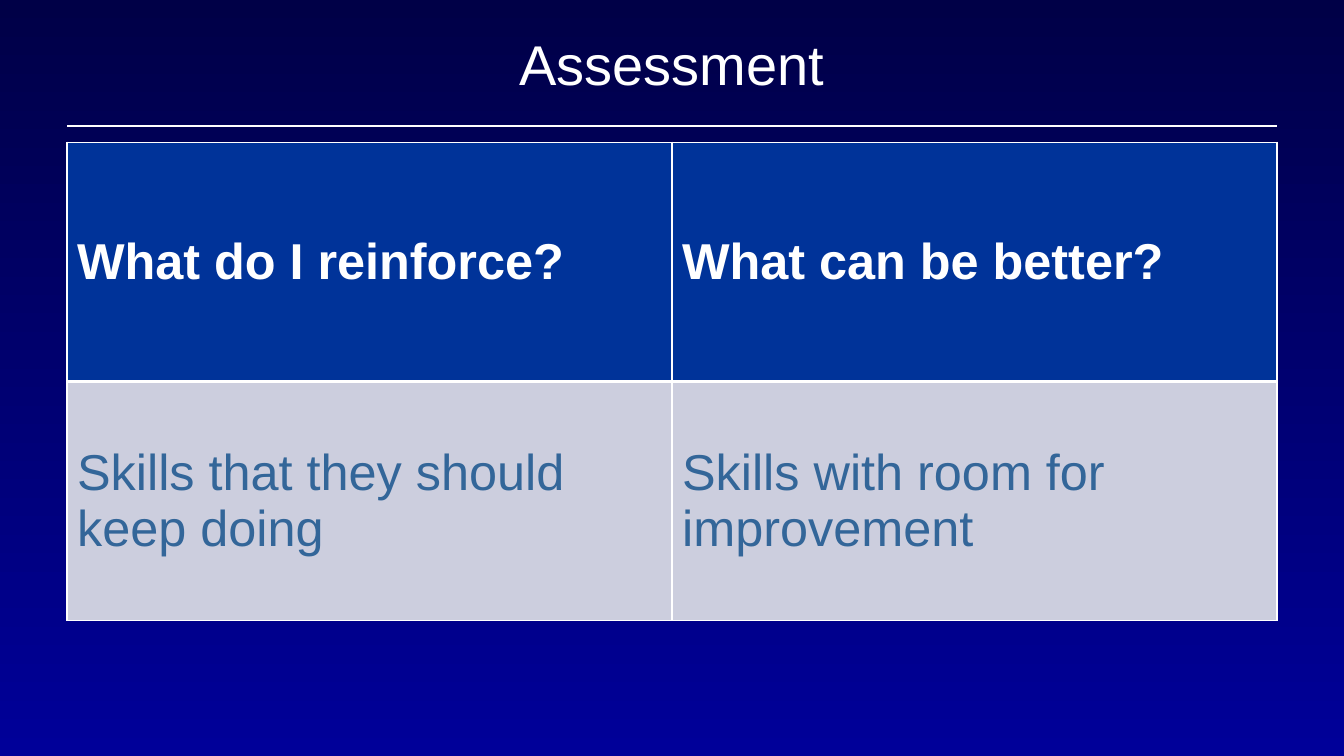
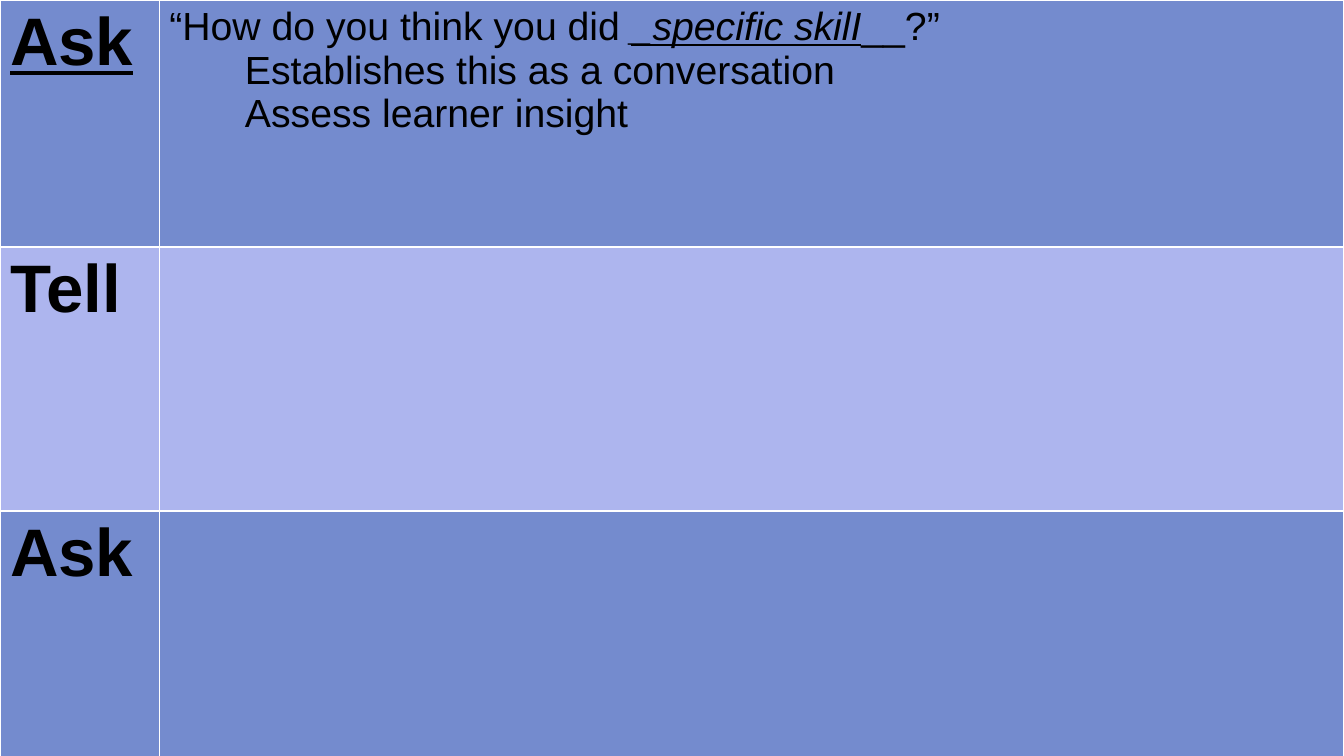
from lxml.etree import SubElement
from pptx import Presentation
from pptx.dml.color import RGBColor
from pptx.enum.shapes import MSO_CONNECTOR
from pptx.enum.text import MSO_ANCHOR, PP_ALIGN
from pptx.oxml.ns import qn
from pptx.util import Inches, Pt

WHITE, BLACK = "FFFFFF", "000000"
HEADER_BLUE, BODY_GRAY, BODY_TEXT = "003399", "CCCEDE", "336699"
ROW_BLUE, ROW_LILAC = "748BCE", "ADB5EE"


def write(paragraph, text, size=28, color=BLACK, bold=False, italic=False, underline=False):
    run = paragraph.add_run()
    run.text = text
    font = run.font
    font.name, font.size = "Arial", Pt(size)
    font.bold, font.italic, font.underline = bold, italic, underline
    font.color.rgb = RGBColor.from_string(color)


def style_cell(cell, fill, top=1, bottom=1):
    """Give the cell a plain fill and white borders, widths in points."""
    properties = cell._tc.get_or_add_tcPr()
    for side, width in (("L", 1), ("R", 1), ("T", top), ("B", bottom)):
        border = SubElement(properties, qn(f"a:ln{side}"), w=str(Pt(width)))
        border_fill = SubElement(border, qn("a:solidFill"))
        SubElement(border_fill, qn("a:srgbClr"), val=WHITE)
    cell.fill.solid()
    cell.fill.fore_color.rgb = RGBColor.from_string(fill)


prs = Presentation()
prs.slide_width, prs.slide_height = Inches(13.33), Inches(7.5)
blank = prs.slide_layouts[6]
content_width, title_height = Inches(12), Inches(1.25)
margin = (prs.slide_width - content_width) // 2

# Shared background
master = prs.slide_master
background = master.background.fill
background.gradient()
background.gradient_angle = 270
for stop, color in zip(background.gradient_stops, ("000047", "000099")):
    stop.color.rgb = RGBColor.from_string(color)

# Slide 1: assessment
slide = prs.slides.add_slide(blank)

# The rule under the title belongs to the master, which has no add_connector
title_rule = slide.shapes.add_connector(
    MSO_CONNECTOR.STRAIGHT, margin, title_height, margin + content_width, title_height)
title_rule.line.color.rgb = RGBColor.from_string(WHITE)
title_rule.line.width = Pt(2)
SubElement(title_rule._element.spPr, qn("a:effectLst"))
master.shapes._spTree.append(title_rule._element)

title = slide.shapes.add_textbox(margin, 0, content_width, title_height).text_frame
title.word_wrap = True
title.vertical_anchor = MSO_ANCHOR.MIDDLE
title.paragraphs[0].alignment = PP_ALIGN.CENTER
write(title.paragraphs[0], "Assessment", size=40, color=WHITE)

assessment = slide.shapes.add_table(
    2, 2, margin, Inches(1.41), content_width, Inches(4.75)).table
assessment_rows = [
    (("What do I reinforce?", "What can be better?"),
     dict(color=WHITE, bold=True), dict(fill=HEADER_BLUE, bottom=3)),
    (("Skills that they should keep doing", "Skills with room for improvement"),
     dict(color=BODY_TEXT), dict(fill=BODY_GRAY, top=3)),
]
for row, (texts, text_format, cell_format) in zip(assessment.rows, assessment_rows):
    for cell, text in zip(row.cells, texts):
        style_cell(cell, **cell_format)
        cell.vertical_anchor = MSO_ANCHOR.MIDDLE
        write(cell.text_frame.paragraphs[0], text, size=36, **text_format)

# Slide 2: ask, tell, ask
slide = prs.slides.add_slide(blank)
steps = [
    ("Ask", 2.45, ROW_BLUE, True),
    ("Tell", 2.62, ROW_LILAC, False),
    ("Ask", 2.51, ROW_BLUE, False),
]
step_width = Inches(1.58)
feedback = slide.shapes.add_table(
    len(steps), 2, 0, 0, prs.slide_width, Inches(sum(step[1] for step in steps))).table
feedback.columns[0].width = step_width
feedback.columns[1].width = prs.slide_width - step_width
for row, (step, height, fill, underline) in zip(feedback.rows, steps):
    row.height = Inches(height)
    for cell in row.cells:
        style_cell(cell, fill)
    write(row.cells[0].text_frame.paragraphs[0], step, size=48, bold=True, underline=underline)

prompt = feedback.cell(0, 1).text_frame
question = prompt.paragraphs[0]
write(question, "“How do you think you did ")
write(question, "_specific skilI", italic=True, underline=True)
write(question, "__?”")
for purpose in ("Establishes this as a conversation", "Assess learner insight"):
    paragraph = prompt.add_paragraph()
    paragraph._p.get_or_add_pPr().set("marL", str(Inches(0.75)))
    write(paragraph, purpose)

prs.save("out.pptx")
